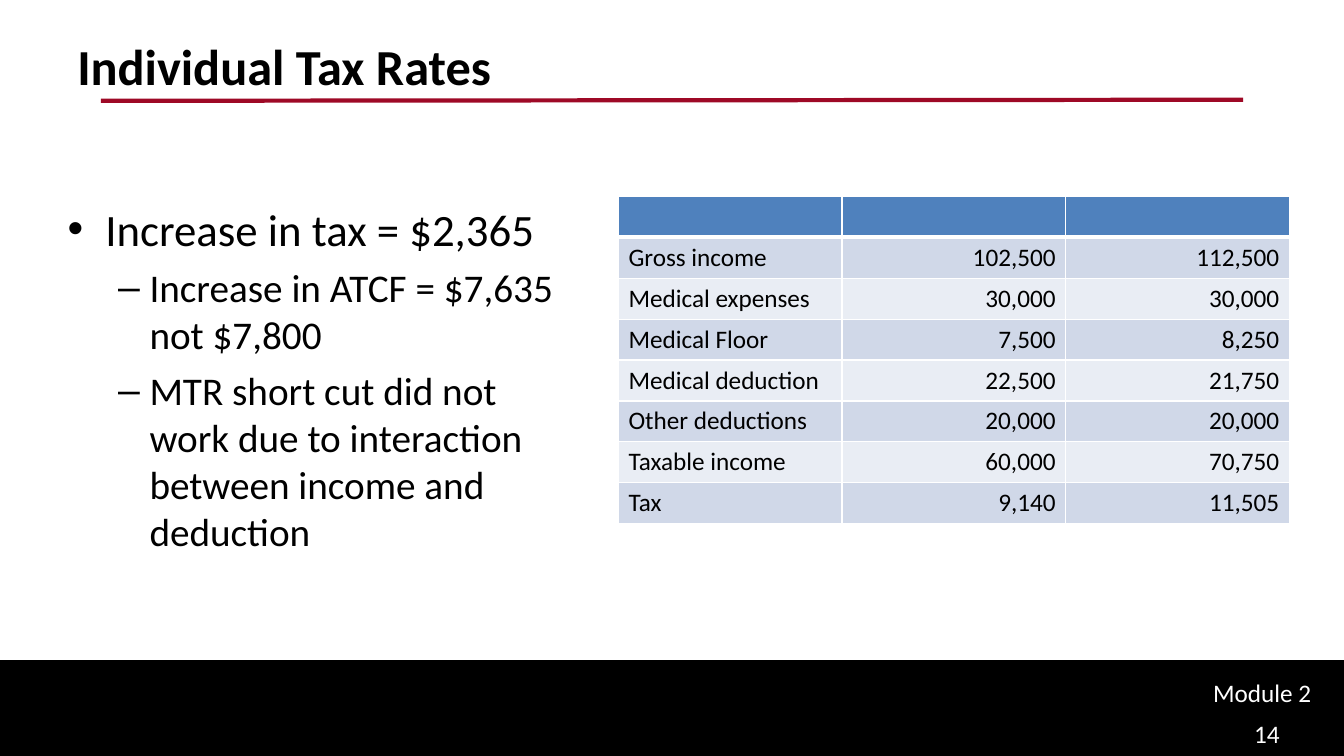
"""Builds the Individual Tax Rates slide with its bullets and comparison table."""
from dataclasses import dataclass

from lxml import etree
from pptx import Presentation
from pptx.dml.color import RGBColor
from pptx.enum.shapes import MSO_CONNECTOR, MSO_SHAPE
from pptx.enum.text import MSO_ANCHOR, MSO_AUTO_SIZE, PP_ALIGN
from pptx.oxml.ns import qn
from pptx.slide import Slide
from pptx.table import _Cell
from pptx.text.text import TextFrame, _Paragraph
from pptx.util import Pt

EMU_PER_PX = 9525
LEFT, RIGHT = PP_ALIGN.LEFT, PP_ALIGN.RIGHT
TOP = MSO_ANCHOR.TOP
NO_AUTOFIT = MSO_AUTO_SIZE.NONE
RECTANGLE = MSO_SHAPE.RECTANGLE
STRAIGHT = MSO_CONNECTOR.STRAIGHT
TITLE_ONLY = 5


@dataclass(frozen=True)
class Theme:
    font: str = "Calibri"
    ink: str = "000000"
    paper: str = "FFFFFF"
    rule: str = "9E0926"
    header: str = "4F81BD"
    bands: tuple[str, str] = ("D0D8E8", "E9EDF4")
    title_size: int = 36
    point_size: int = 32
    subpoint_size: int = 28
    small_size: int = 18


@dataclass(frozen=True)
class Box:
    left: int
    top: int
    width: int
    height: int

    def emu(self) -> tuple[int, int, int, int]:
        return px(self.left), px(self.top), px(self.width), px(self.height)


@dataclass(frozen=True)
class Bullet:
    mark: str
    level: int
    margin: int
    hanging: int


@dataclass(frozen=True)
class Point:
    text: str
    bullet: Bullet
    size: int


@dataclass(frozen=True)
class Label:
    text: str
    box: Box


@dataclass(frozen=True)
class TaxRow:
    item: str
    before: str
    after: str


THEME = Theme()
MAIN = Bullet("•", 0, 36, 36)
SUB = Bullet("–", 1, 78, 30)
POINTS = (
    Point("Increase in tax = $2,365", MAIN, THEME.point_size),
    Point("Increase in ATCF = $7,635 not $7,800", SUB, THEME.subpoint_size),
    Point("MTR short cut did not work due to interaction between income and deduction",
          SUB, THEME.subpoint_size),
)
FOOTER_LABELS = (
    Label("Module 2", Box(1146, 640, 127, 38)),
    Label("14", Box(1185, 679, 87, 41)),
)
TAX_ROWS = (
    TaxRow("Gross income", "102,500", "112,500"),
    TaxRow("Medical expenses", "30,000", "30,000"),
    TaxRow("Medical Floor", "7,500", "8,250"),
    TaxRow("Medical deduction", "22,500", "21,750"),
    TaxRow("Other deductions", "20,000", "20,000"),
    TaxRow("Taxable income", "60,000", "70,750"),
    TaxRow("Tax", "9,140", "11,505"),
)
COLUMN_WIDTH, ROW_HEIGHT = 213, 39


def px(length: int) -> int:
    return length * EMU_PER_PX


def rgb(colour: str) -> RGBColor:
    return RGBColor.from_string(colour)


def write(paragraph: _Paragraph, text: str, *, size: int = THEME.small_size,
          colour: str = THEME.ink, bold: bool = False,
          align: PP_ALIGN = LEFT, before: int = 0) -> None:
    paragraph.add_run().text = text
    paragraph.alignment = align
    paragraph.space_before = Pt(before)
    for font in (paragraph.font, paragraph.runs[0].font):
        font.name, font.size, font.bold = THEME.font, Pt(size), bold
        font.color.rgb = rgb(colour)


def set_bullet(paragraph: _Paragraph, bullet: Bullet) -> None:
    paragraph.level = bullet.level
    properties = paragraph._p.get_or_add_pPr()
    properties.set("marL", str(px(bullet.margin)))
    properties.set("indent", str(-px(bullet.hanging)))
    etree.SubElement(properties, qn("a:buFont"), typeface="Arial")
    etree.SubElement(properties, qn("a:buChar"), char=bullet.mark)


def set_frame(frame: TextFrame) -> None:
    frame.word_wrap = True
    frame.auto_size = NO_AUTOFIT
    frame.vertical_anchor = TOP


def add_frame(slide: Slide, box: Box) -> TextFrame:
    frame = slide.shapes.add_textbox(*box.emu()).text_frame
    set_frame(frame)
    return frame


def set_borders(cell: _Cell, *, top: int = 1, bottom: int = 1) -> None:
    properties = cell._tc.get_or_add_tcPr()
    widths = {"a:lnL": 1, "a:lnR": 1, "a:lnT": top, "a:lnB": bottom}
    for position, (tag, width) in enumerate(widths.items()):
        border = etree.Element(qn(tag), w=str(Pt(width)))
        fill = etree.SubElement(border, qn("a:solidFill"))
        etree.SubElement(fill, qn("a:srgbClr"), val=THEME.paper)
        properties.insert(position, border)


def fill_cell(cell: _Cell, colour: str) -> None:
    cell.fill.solid()
    cell.fill.fore_color.rgb = rgb(colour)


def add_background(slide: Slide) -> None:
    footer = slide.shapes.add_shape(RECTANGLE, *Box(0, 630, 1280, 90).emu())
    footer.shadow.inherit = False
    footer.fill.solid()
    footer.fill.fore_color.rgb = footer.line.color.rgb = rgb(THEME.ink)
    footer.line.width = Pt(2)
    rule = slide.shapes.add_connector(STRAIGHT, px(96), px(96), px(1184), px(95))
    rule.line.color.rgb = rgb(THEME.rule)
    rule.line.width = Pt(3)
    etree.SubElement(rule._element.spPr, qn("a:effectLst"))


def add_title(slide: Slide, text: str) -> None:
    title = slide.shapes.title
    title.left, title.top, title.width, title.height = Box(64, 29, 1152, 120).emu()
    set_frame(title.text_frame)
    write(title.text_frame.paragraphs[0], text, size=THEME.title_size, bold=True)


def add_points(slide: Slide) -> None:
    frame = add_frame(slide, Box(55, 187, 497, 453))
    for index, point in enumerate(POINTS):
        paragraph = frame.add_paragraph() if index else frame.paragraphs[0]
        set_bullet(paragraph, point.bullet)
        write(paragraph, point.text, size=point.size, before=6 if index else 0)


def add_tax_table(slide: Slide) -> None:
    row_count = len(TAX_ROWS) + 1
    box = Box(589, 187, 3 * COLUMN_WIDTH, row_count * ROW_HEIGHT)
    table = slide.shapes.add_table(row_count, 3, *box.emu()).table
    for header in table.rows[0].cells:
        fill_cell(header, THEME.header)
        set_borders(header, bottom=3)
    for index, row in enumerate(TAX_ROWS):
        for column, text in enumerate((row.item, row.before, row.after)):
            cell = table.cell(index + 1, column)
            fill_cell(cell, THEME.bands[index % 2])
            set_borders(cell, top=1 if index else 3)
            write(cell.text_frame.paragraphs[0], text, align=RIGHT if column else LEFT)


def main() -> None:
    deck = Presentation()
    deck.slide_width, deck.slide_height = px(1280), px(720)
    slide = deck.slides.add_slide(deck.slide_layouts[TITLE_ONLY])
    add_background(slide)
    add_title(slide, "Individual Tax Rates")
    add_points(slide)
    for label in FOOTER_LABELS:
        write(add_frame(slide, label.box).paragraphs[0], label.text, colour=THEME.paper)
    add_tax_table(slide)
    deck.save("out.pptx")


if __name__ == "__main__":
    main()
